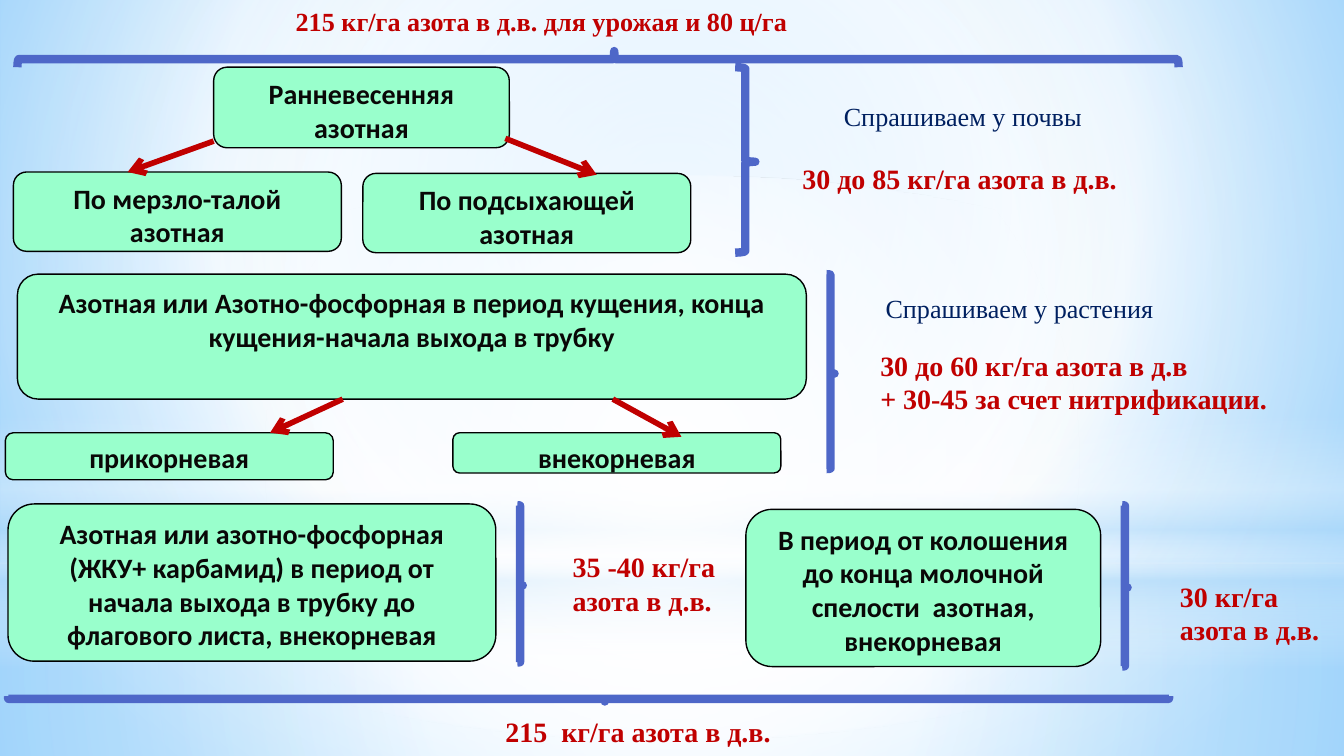
from dataclasses import dataclass

import pptx
import pptx.dml.color
import pptx.enum.shapes
import pptx.enum.text
import pptx.oxml
import pptx.oxml.ns
import pptx.util

Inches = pptx.util.Inches
RGBColor = pptx.dml.color.RGBColor
Shape = pptx.enum.shapes.MSO_SHAPE
Align = pptx.enum.text.PP_ALIGN
qn = pptx.oxml.ns.qn

MINT = RGBColor(0x99, 0xFF, 0xCC)
BLACK = RGBColor(0, 0, 0)
INK = RGBColor(0x09, 0x08, 0x07)
RED = RGBColor(0xC0, 0, 0)
NAVY = RGBColor(0, 0x20, 0x60)
BLUE = RGBColor(0x4E, 0x67, 0xC8)
WHITE = RGBColor(0xFF, 0xFF, 0xFF)
PALE = RGBColor(0xB4, 0xDC, 0xFA)
SKY = RGBColor(0x9E, 0xD5, 0xFF)
AZURE = RGBColor(0x5B, 0xB9, 0xFF)
SERIF = "Times New Roman"
CENTRE = (50, 50, 50, 50)


@dataclass
class Box:
    left: float
    top: float
    width: float
    height: float

    def inner(self, left, top, width, height):
        return Box(self.left + left, self.top + top, width, height)

    def lengths(self):
        return [Inches(v) for v in (self.left, self.top, self.width, self.height)]


def paint_gradient(fill, owner, stops, focus=None):
    """Stops are (position, colour, opacity); without a focus the gradient runs downwards."""
    fill.gradient()
    old = next(owner.iter(qn("a:gradFill")))
    marks = "".join(
        f'<a:gs pos="{pos * 1000}"><a:srgbClr val="{colour}">'
        f'<a:alpha val="{opacity * 1000}"/></a:srgbClr></a:gs>'
        for pos, colour, opacity in stops)
    if focus:
        sides = " ".join(f'{side}="{value * 1000}"' for side, value in zip("ltrb", focus))
        course = f'<a:path path="circle"><a:fillToRect {sides}/></a:path>'
    else:
        course = '<a:lin ang="5400000" scaled="0"/>'
    new = pptx.oxml.parse_xml(
        f'<a:gradFill {pptx.oxml.ns.nsdecls("a")} rotWithShape="1">'
        f"<a:gsLst>{marks}</a:gsLst>{course}</a:gradFill>")
    old.getparent().replace(old, new)


def write_text(shape, text, size=15, font=SERIF, colour=RED, bold=True,
               align=Align.LEFT, wrap=False, insets=(0.07, 0.04)):
    frame = shape.text_frame
    frame.word_wrap = wrap
    frame.auto_size = pptx.enum.text.MSO_AUTO_SIZE.NONE
    frame.vertical_anchor = pptx.enum.text.MSO_ANCHOR.TOP
    frame.margin_left = frame.margin_right = Inches(insets[0])
    frame.margin_top = frame.margin_bottom = Inches(insets[1])
    for index, line in enumerate(text.split("\n")):
        para = frame.add_paragraph() if index else frame.paragraphs[0]
        para.alignment = align
        span = para.add_run()
        span.text = line
        span.font.size = pptx.util.Pt(size)
        span.font.name = font
        span.font.bold = bold
        span.font.color.rgb = colour


def add_label(page, box, text, **style):
    write_text(page.shapes.add_textbox(*box.lengths()), text, **style)


def add_question(page, box, text):
    add_label(page, box, text, size=14, colour=NAVY, bold=False, insets=(0.1, 0.05))


def add_card(page, box, text):
    card = page.shapes.add_shape(Shape.ROUNDED_RECTANGLE, *box.lengths())
    card.shadow.inherit = False
    card.fill.solid()
    card.fill.fore_color.rgb = MINT
    card.line.color.rgb = BLACK
    card.line.width = pptx.util.Pt(0.75)
    write_text(card, text, font="Calibri", colour=INK, align=Align.CENTER, wrap=True)


def add_arrow(page, box):
    """Runs from the box's left top by its width and height, which may be negative."""
    ends = (box.left, box.top, box.left + box.width, box.top + box.height)
    arrow = page.shapes.add_connector(
        pptx.enum.shapes.MSO_CONNECTOR.STRAIGHT, *[Inches(v) for v in ends])
    arrow.line.color.rgb = RED
    arrow.line.width = pptx.util.Pt(3)
    properties = arrow._element.spPr
    line = properties.find(qn("a:ln"))
    line.append(line.makeelement(qn("a:tailEnd"), {"type": "arrow"}))
    properties.append(properties.makeelement(qn("a:effectLst"), {}))


def add_brace(page, box, tip=0.51):
    brace = page.shapes.add_shape(Shape.RIGHT_BRACE, *box.lengths())
    brace.shadow.inherit = False
    brace.adjustments[0], brace.adjustments[1] = 0.083, tip
    brace.fill.background()
    brace.line.color.rgb = BLUE
    brace.line.width = pptx.util.Pt(4.5)
    return brace


def add_wide_brace(page, box, points_down=False):
    """A brace laid on its side so that it fills the box."""
    shift = (box.width - box.height) / 2
    brace = add_brace(page, box.inner(shift, -shift, box.height, box.width), tip=0.514)
    brace.rotation = 270
    if points_down:
        brace._element.spPr.find(qn("a:xfrm")).set("flipH", "1")


def add_backdrop(page, box):
    """Paints the page and lays the light layers on its slide master."""
    paint_gradient(page.background.fill, page._element,
                   [(0, SKY, 100), (60, WHITE, 100), (100, AZURE, 100)], (20, 10, 20, 60))
    layers = [
        (Shape.RECTANGLE, 4.19, 1.44, [(0, WHITE, 91), (37, WHITE, 76), (100, PALE, 79)], CENTRE),
        (Shape.RECTANGLE, 0, 4.19, [(0, WHITE, 89), (48, WHITE, 62), (100, PALE, 79)], CENTRE),
        (Shape.RECTANGLE, 3.09, 1.88, [(0, WHITE, 0), (29, WHITE, 30), (45, PALE, 40),
                                       (55, WHITE, 26), (65, PALE, 60), (100, WHITE, 0)], None),
        (Shape.OVAL, 1.31, 4.19, [(0, WHITE, 100), (56, WHITE, 0)], CENTRE),
    ]
    master_tree = page.slide_layout.slide_master.shapes._spTree
    for number, (kind, top, height, stops, focus) in enumerate(layers):
        layer = page.shapes.add_shape(kind, *box.inner(0, top, box.width, height).lengths())
        layer.shadow.inherit = False
        layer.line.fill.background()
        paint_gradient(layer.fill, layer._element.spPr, stops, focus)
        layer._element.nvSpPr.cNvPr.set("id", str(100 + number))
        master_tree.append(layer._element)


def add_heading(page, box):
    title = page.shapes.title
    title.left, title.top, title.width, title.height = box.inner(2.03, 0, 3.84, 0.31).lengths()
    write_text(title, "215 кг/га азота в д.в. для урожая и 80 ц/га", size=14)
    add_wide_brace(page, box.inner(0.03, 0.38, 8.64, 0.12))


def add_early_spring(page, box):
    add_card(page, box.inner(1.49, 0, 2.2, 0.6), "Ранневесенняя азотная")
    add_card(page, box.inner(2.6, 0.79, 2.44, 0.59), "По подсыхающей азотная")
    add_card(page, box.inner(0, 0.78, 2.44, 0.59), "По мерзло-талой азотная")
    add_arrow(page, box.inner(1.49, 0.55, -0.64, 0.23))
    add_arrow(page, box.inner(3.66, 0.53, 0.68, 0.27))
    add_brace(page, box.inner(5.37, 0, 0.15, box.height))
    add_question(page, box.inner(6.08, 0.2, 1.99, 0.34), "Спрашиваем у почвы")
    add_label(page, box.inner(5.8, 0.66, 2.52, 0.33), "30 до 85 кг/га азота в д.в.")


def add_tillering(page, box):
    add_card(page, box.inner(0.09, 0, 5.87, 0.93),
             "Азотная или Азотно-фосфорная в период кущения, конца кущения-начала выхода в трубку")
    add_card(page, box.inner(0, 1.18, 2.44, 0.35), "прикорневая")
    add_card(page, box.inner(3.33, 1.18, 2.44, 0.3), "внекорневая")
    add_arrow(page, box.inner(2.51, 0.93, -0.54, 0.25))
    add_arrow(page, box.inner(4.52, 0.93, 0.51, 0.28))
    add_brace(page, box.inner(6.11, 0, 0.06, 1.45))
    add_question(page, box.inner(6.45, 0.09, 2.22, 0.34), "Спрашиваем у растения")
    add_label(page, box.inner(6.44, 0.51, 3.06, 0.58),
              "30 до 60 кг/га азота в д.в\n+ 30-45 за счет нитрификации.")


def add_late_feeding(page, box, text, card, brace_left, dose, dose_box):
    add_card(page, box.inner(*card), text)
    add_brace(page, box.inner(brace_left, 0, 0.04, box.height))
    add_label(page, box.inner(*dose_box), dose)


def add_total(page, box):
    add_wide_brace(page, box.inner(0, 0, 8.64, 0.04), points_down=True)
    add_label(page, box.inner(3.63, 0.1, 2.15, 0.33), "215  кг/га азота в д.в.")


def main():
    deck = pptx.Presentation()
    deck.slide_width = Inches(10)
    deck.slide_height = deck.slide_width * 9 // 16
    page = deck.slides.add_slide(deck.slide_layouts[5])
    add_backdrop(page, Box(0, 0, 10, 5.63))
    add_heading(page, Box(0.1, 0, 8.7, 0.5))
    add_early_spring(page, Box(0.1, 0.5, 8.4, 1.38))
    add_tillering(page, Box(0.04, 2.04, 9.5, 1.53))
    add_late_feeding(page, Box(0.06, 3.76, 5.4, 1.17),
                     "Азотная или азотно-фосфорная (ЖКУ+ карбамид) в период от начала "
                     "выхода в трубку до флагового листа, внекорневая",
                     (0, -0.01, 3.63, 1.17), 3.79,
                     "35 -40 кг/га\nазота в д.в.", (4.13, 0.29, 1.28, 0.58))
    add_late_feeding(page, Box(5.55, 3.76, 4.4, 1.2),
                     "В период от колошения до конца молочной спелости  азотная, внекорневая",
                     (0, 0.03, 2.64, 1.17), 2.8,
                     "30 кг/га\nазота в д.в.", (3.16, 0.51, 1.2, 0.58))
    add_total(page, Box(0.06, 5.18, 8.64, 0.43))
    deck.save("out.pptx")


if __name__ == "__main__":
    main()
